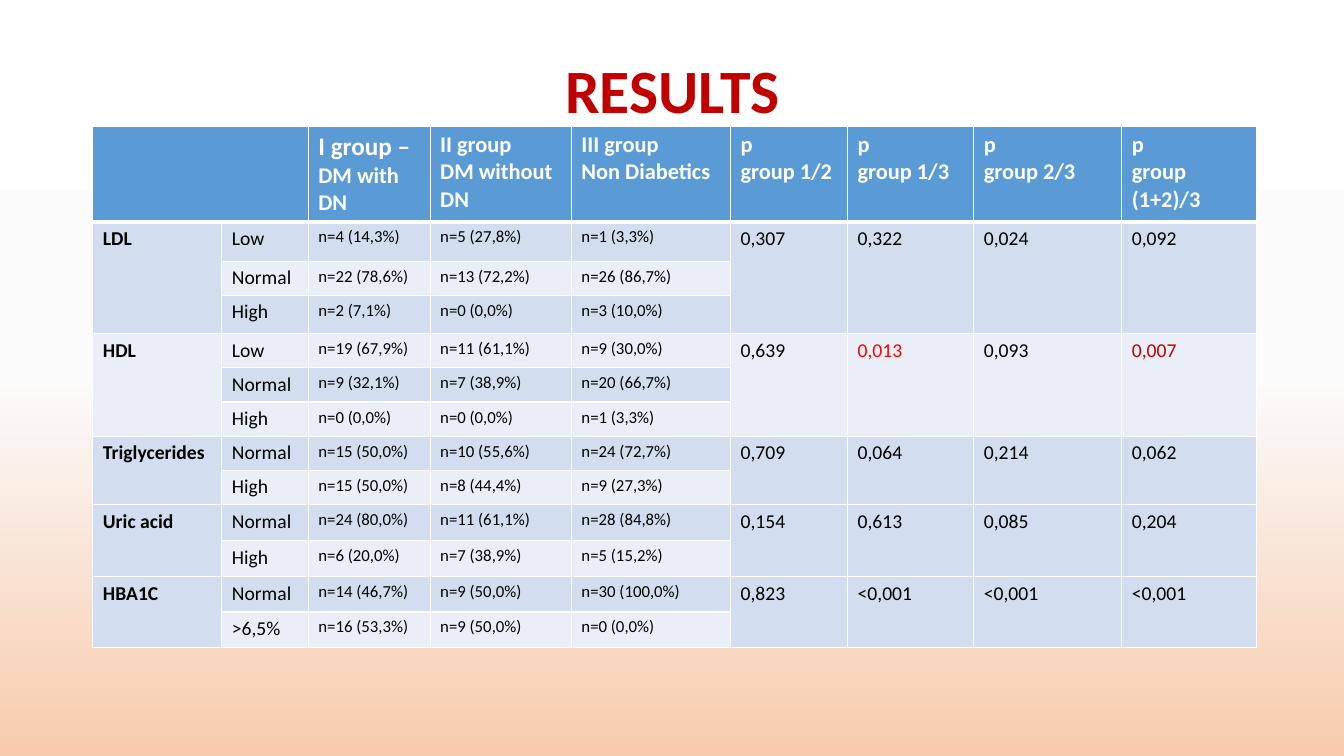
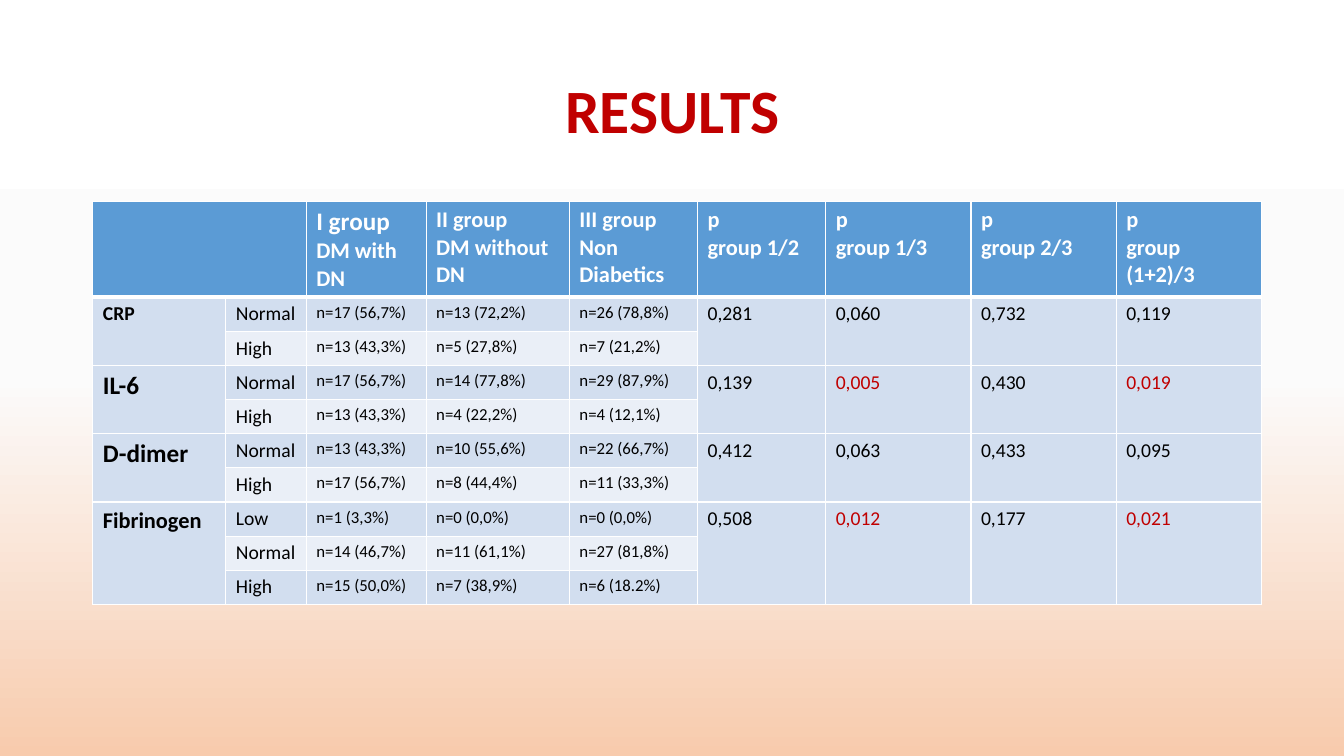
from lxml import etree
from pptx import Presentation
from pptx.dml.color import RGBColor
from pptx.enum.text import MSO_ANCHOR, PP_ALIGN
from pptx.oxml.ns import qn
from pptx.util import Cm, Pt

CENTER = PP_ALIGN.CENTER
MIDDLE = MSO_ANCHOR.MIDDLE
FONT = "Calibri"
WHITE, BLACK, RED, BRIGHT_RED = "FFFFFF", "000000", "C00000", "FF0000"
HEADER_FILL = "5B9BD5"
BAND_FILLS = ("D2DEEF", "EAEFF7")
BACKGROUND = ((0, WHITE), (50, "FBFBFB"), (100, "F8CBAD"))
LEFT, TITLE_WIDTH = 2.34, 29.21
TITLE_LAYOUT = 5
FIRST_COUNT, FIRST_P = 2, 5
HEADER_HEIGHT, ROW_HEIGHT = 2.4, 0.86

SHARED_HEADERS = [
    [[("II group", 16)], [("DM without DN", 16)]],
    [[("III group", 16)], [("Non Diabetics", 16)]],
    [[("p", 16)], [("group 1/2", 16)]],
    [[("p", 16)], [("group 1/3", 16)]],
    [[("p", 16)], [("group 2/3", 16)]],
    [[("p", 16)], [("group", 16)], [("(1+2)/3", 16)]],
]

LIPIDS = [
    ("LDL", 14, [
        ("Low", "n=4 (14,3%)", "n=5 (27,8%)", "n=1 (3,3%)"),
        ("Normal", "n=22 (78,6%)", "n=13 (72,2%)", "n=26 (86,7%)"),
        ("High", "n=2 (7,1%)", "n=0 (0,0%)", "n=3 (10,0%)"),
    ], ("0,307", "0,322", "0,024", "0,092")),
    ("HDL", 14, [
        ("Low", "n=19 (67,9%)", "n=11 (61,1%)", "n=9 (30,0%)"),
        ("Normal", "n=9 (32,1%)", "n=7 (38,9%)", "n=20 (66,7%)"),
        ("High", "n=0 (0,0%)", "n=0 (0,0%)", "n=1 (3,3%)"),
    ], ("0,639", "0,013", "0,093", "0,007")),
    ("Triglycerides", 14, [
        ("Normal", "n=15 (50,0%)", "n=10 (55,6%)", "n=24 (72,7%)"),
        ("High", "n=15 (50,0%)", "n=8 (44,4%)", "n=9 (27,3%)"),
    ], ("0,709", "0,064", "0,214", "0,062")),
    ("Uric acid", 14, [
        ("Normal", "n=24 (80,0%)", "n=11 (61,1%)", "n=28 (84,8%)"),
        ("High", "n=6 (20,0%)", "n=7 (38,9%)", "n=5 (15,2%)"),
    ], ("0,154", "0,613", "0,085", "0,204")),
    ("HBA1C", 14, [
        ("Normal", "n=14 (46,7%)", "n=9 (50,0%)", "n=30 (100,0%)"),
        ("˃6,5%", "n=16 (53,3%)", "n=9 (50,0%)", "n=0 (0,0%)"),
    ], ("0,823", "˂0,001", "˂0,001", "˂0,001")),
]

INFLAMMATION = [
    ("CRP", 14, [
        ("Normal", "n=17 (56,7%)", "n=13 (72,2%)", "n=26 (78,8%)"),
        ("High", "n=13 (43,3%)", "n=5 (27,8%)", "n=7 (21,2%)"),
    ], ("0,281", "0,060", "0,732", "0,119")),
    ("IL-6", 18, [
        ("Normal", "n=17 (56,7%)", "n=14 (77,8%)", "n=29 (87,9%)"),
        ("High", "n=13 (43,3%)", "n=4 (22,2%)", "n=4 (12,1%)"),
    ], ("0,139", "0,005", "0,430", "0,019")),
    ("D-dimer", 18, [
        ("Normal", "n=13 (43,3%)", "n=10 (55,6%)", "n=22 (66,7%)"),
        ("High", "n=17 (56,7%)", "n=8 (44,4%)", "n=11 (33,3%)"),
    ], ("0,412", "0,063", "0,433", "0,095")),
    ("Fibrinogen", 16, [
        ("Low", "n=1 (3,3%)", "n=0 (0,0%)", "n=0 (0,0%)"),
        ("Normal", "n=14 (46,7%)", "n=11 (61,1%)", "n=27 (81,8%)"),
        ("High", "n=15 (50,0%)", "n=7 (38,9%)", "n=6 (18.2%)"),
    ], ("0,508", "0,012", "0,177", "0,021")),
]

HIGHLIGHTS = {"0,013": BRIGHT_RED, "0,007": RED, "0,005": RED,
              "0,019": RED, "0,012": RED, "0,021": RED}


def rgb(color):
    return RGBColor.from_string(color)


def set_font(font, size, color, bold=False):
    font.name = FONT
    font.size = Pt(size)
    font.bold = bold
    font.color.rgb = rgb(color)


def set_background(master):
    fill = master.background.fill
    fill.gradient()
    fill.gradient_angle = 270
    stops = master.element.find(".//" + qn("a:gsLst"))
    for stop in list(stops):
        stops.remove(stop)
    for position, color in BACKGROUND:
        stop = etree.SubElement(stops, qn("a:gs"), pos=str(position * 1000))
        etree.SubElement(stop, qn("a:srgbClr"), val=color)


def add_title(slide, top, height):
    sp = slide.shapes.title
    sp.left, sp.top = Cm(LEFT), Cm(top)
    sp.width, sp.height = Cm(TITLE_WIDTH), Cm(height)
    tf = sp.text_frame
    tf.vertical_anchor = MIDDLE
    tf.text = "RESULTS"
    p = tf.paragraphs[0]
    p.alignment = CENTER
    p.line_spacing = 0.9
    set_font(p.font, 44, RED, True)


def style_cell(cell, fill, top=1, bottom=1):
    tcPr = cell._tc.get_or_add_tcPr()
    for side, width in (("L", 1), ("R", 1), ("T", top), ("B", bottom)):
        ln = etree.SubElement(tcPr, qn("a:ln" + side), w=str(Pt(width)))
        line_fill = etree.SubElement(ln, qn("a:solidFill"))
        etree.SubElement(line_fill, qn("a:srgbClr"), val=WHITE)
    cell.fill.solid()
    cell.fill.fore_color.rgb = rgb(fill)


def write_cell(cell, text, size, color=BLACK, bold=False):
    cell.text = text
    set_font(cell.text_frame.paragraphs[0].font, size, color, bold)


def write_header(cell, lines):
    tf = cell.text_frame
    for i, runs in enumerate(lines):
        p = tf.add_paragraph() if i else tf.paragraphs[0]
        set_font(p.font, runs[-1][1], WHITE, True)
        for text, size in runs:
            r = p.add_run()
            r.text = text
            if size != runs[-1][1]:
                r.font.size = Pt(size)


def write_group(table, row, group):
    label, label_size, levels, p_values = group
    last = row + len(levels) - 1
    write_cell(table.cell(row, 0), label, label_size, bold=True)
    for i, (level, *counts) in enumerate(levels, row):
        write_cell(table.cell(i, 1), level, 14)
        for col, count in enumerate(counts, FIRST_COUNT):
            write_cell(table.cell(i, col), count, 12)
    for col, value in enumerate(p_values, FIRST_P):
        write_cell(table.cell(row, col), value, 14, HIGHLIGHTS.get(value, BLACK))
    for col in (0, *range(FIRST_P, FIRST_P + len(p_values))):
        table.cell(row, col).merge(table.cell(last, col))
    return last + 1


def add_results_table(slide, top, widths, heights, first_header, groups):
    frame = slide.shapes.add_table(len(heights), len(widths), Cm(LEFT), Cm(top),
                                   Cm(sum(widths)), Cm(sum(heights)))
    table = frame.table
    for column, width in zip(table.columns, widths):
        column.width = Cm(width)
    for i, (row, height) in enumerate(zip(table.rows, heights)):
        row.height = Cm(height)
        for cell in row.cells:
            if i == 0:
                style_cell(cell, HEADER_FILL, bottom=3)
            else:
                style_cell(cell, BAND_FILLS[(i - 1) % 2], top=3 if i == 1 else 1)
    table.cell(0, 0).merge(table.cell(0, 1))
    for col, lines in enumerate([first_header] + SHARED_HEADERS, FIRST_COUNT):
        write_header(table.cell(0, col), lines)
    row = 1
    for group in groups:
        row = write_group(table, row, group)


def add_results_slide(prs, title_box, *table_parts):
    slide = prs.slides.add_slide(prs.slide_layouts[TITLE_LAYOUT])
    add_title(slide, *title_box)
    add_results_table(slide, *table_parts)


def main():
    prs = Presentation()
    prs.slide_width, prs.slide_height = Cm(33.87), Cm(19.05)
    set_background(prs.slide_master)
    add_results_slide(
        prs, (0, 4.7), 3.18,
        [3.25, 2.18, 3.07, 3.56, 4.01, 2.95, 3.18, 3.73, 3.4],
        [HEADER_HEIGHT, 0.99, ROW_HEIGHT, 0.97] + [ROW_HEIGHT] * 5
        + [0.91, 0.91, 0.89, 0.89],
        [[("I group –", 18)], [("DM with DN", 16)]], LIPIDS)
    add_results_slide(
        prs, (1.02, 3.68), 5.08,
        [3.35, 2.03, 3.02, 3.61, 3.23, 3.23, 3.66, 3.66, 3.66],
        [HEADER_HEIGHT] + [ROW_HEIGHT] * 9,
        [[("I group ", 18), ("DM with DN", 16)]], INFLAMMATION)
    prs.save("out.pptx")


if __name__ == "__main__":
    main()
